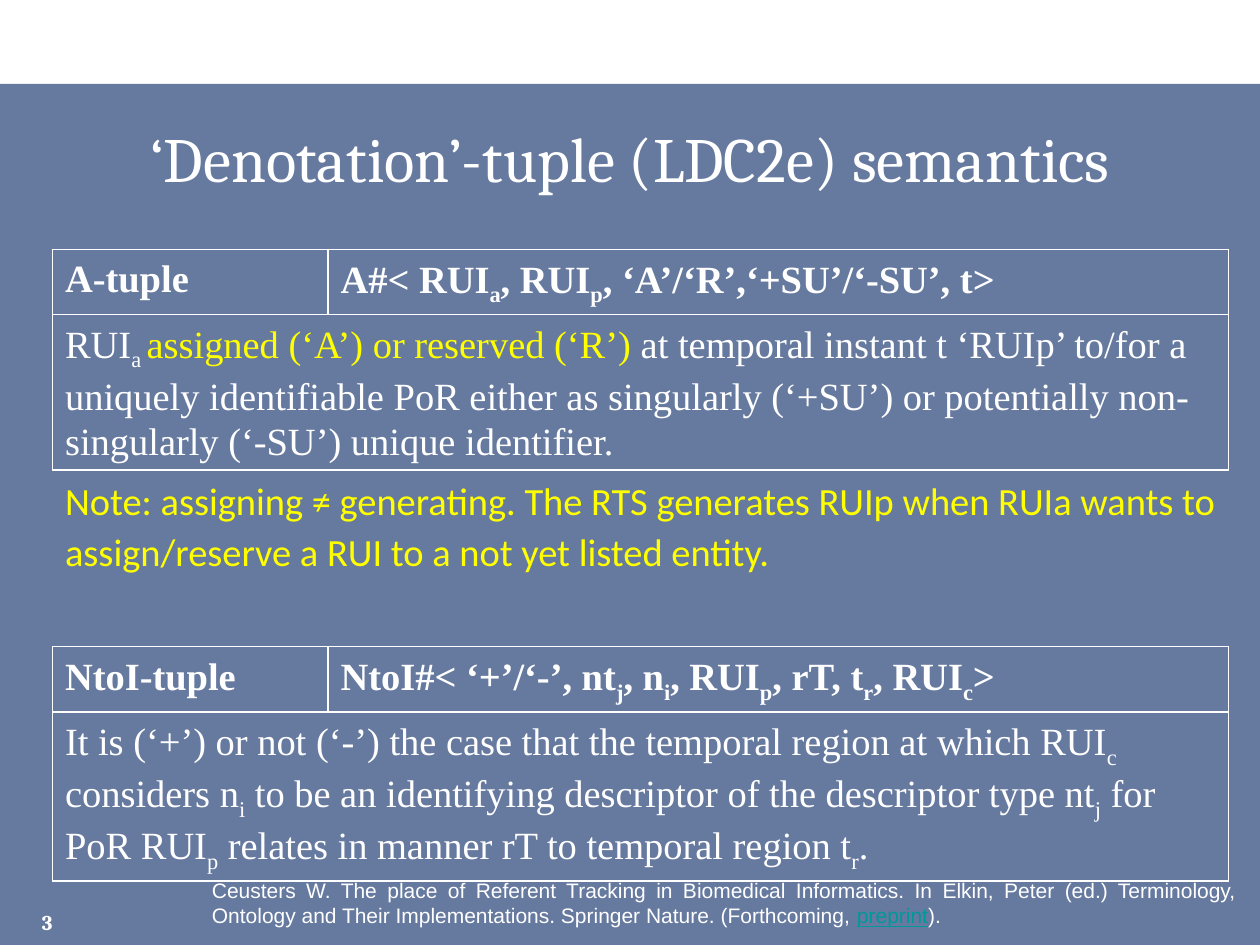
from lxml import etree
from pptx import Presentation
from pptx.dml.color import RGBColor
from pptx.enum.shapes import MSO_SHAPE
from pptx.enum.text import MSO_ANCHOR, PP_ALIGN
from pptx.oxml.ns import qn
from pptx.util import Inches, Pt

LEFT, CENTER, RIGHT, JUSTIFY = PP_ALIGN.LEFT, PP_ALIGN.CENTER, PP_ALIGN.RIGHT, PP_ALIGN.JUSTIFY
TOP, MIDDLE, BOTTOM = MSO_ANCHOR.TOP, MSO_ANCHOR.MIDDLE, MSO_ANCHOR.BOTTOM
RECTANGLE = MSO_SHAPE.RECTANGLE

WHITE, YELLOW, TEAL, NAVY = "FFFFFF", "FFFF00", "009999", "002060"
SERIF, HEADING, NOTE, SANS = "Times New Roman", "Cambria", "Calibri", "Arial"


def colour(value):
    return RGBColor.from_string(value)


def grid(units):
    """The slide is 120 columns by 90 rows, each a twelfth of an inch."""
    return Inches(units / 12)


class SlideBuilder:
    def __init__(self, deck):
        self.slide = deck.slides.add_slide(deck.slide_layouts[5])

    def add_spans(self, paragraph, spans, size, font, align=LEFT, bold=False):
        """Spans are (text, colour, underlined); '|' switches subscript on and off."""
        paragraph.alignment = align
        paragraph.font.size = Pt(size)
        paragraph.font.name = font
        paragraph.font.bold = bold
        for text, shade, underlined in spans:
            for index, part in enumerate(text.split("|")):
                if not part:
                    continue
                span = paragraph.add_run()
                span.text = part
                span.font.size = Pt(size)
                span.font.name = font
                span.font.bold = bold
                span.font.color.rgb = colour(shade)
                if underlined:
                    span.font.underline = True
                if index % 2:
                    span.font._element.set("baseline", "-25000")

    def panel(self, left, top, width, height, fill, opacity):
        shape = self.slide.shapes.add_shape(RECTANGLE, *map(grid, (left, top, width, height)))
        shape.shadow.inherit = False
        shape.fill.solid()
        shape.fill.fore_color.rgb = colour(fill)
        shape.line.fill.background()
        shade = shape._element.spPr.find(".//" + qn("a:srgbClr"))
        etree.SubElement(shade, qn("a:alpha")).set("val", str(opacity * 1000))
        # Send the panel behind the title
        self.slide.shapes._spTree.insert(2, shape._element)

    def title(self, text, left, top, width, height):
        box = self.slide.shapes.title
        box.left, box.top, box.width, box.height = map(grid, (left, top, width, height))
        box.text_frame.vertical_anchor = MIDDLE
        self.add_spans(box.text_frame.paragraphs[0], [(text, WHITE, False)], 36, HEADING, CENTER)

    def text(self, spans, left, top, width, height, font, align, anchor=TOP, inset=None, bold=False):
        box = self.slide.shapes.add_textbox(*map(grid, (left, top, width, height)))
        frame = box.text_frame
        frame.word_wrap = True
        frame.vertical_anchor = anchor
        if inset is not None:
            frame.margin_left = frame.margin_right = inset
            frame.margin_top = frame.margin_bottom = inset
        self.add_spans(frame.paragraphs[0], spans, 12, font, align, bold)

    def borders(self, cell, sides):
        properties = cell._tc.get_or_add_tcPr()
        for side in "LRTB":
            line = etree.SubElement(properties, qn(f"a:ln{side}"), w=str(Pt(1)))
            if side in sides:
                fill = etree.SubElement(line, qn("a:solidFill"))
                etree.SubElement(fill, qn("a:srgbClr"), val=WHITE)
            else:
                etree.SubElement(line, qn("a:noFill"))

    def table(self, rows, left, top, widths, heights):
        """A row is (cells, font, bold, bordered sides); a lone cell spans the row."""
        frame = self.slide.shapes.add_table(
            len(rows), len(widths), *map(grid, (left, top, sum(widths), sum(heights))))
        table = frame.table
        table.first_row = table.horz_banding = False
        for column, width in zip(table.columns, widths):
            column.width = grid(width)
        for number, (cells, font, bold, sides) in enumerate(rows):
            table.rows[number].height = grid(heights[number])
            for index in range(len(widths)):
                cell = table.cell(number, index)
                self.borders(cell, sides)
                cell.fill.background()
                cell.margin_bottom = 0
                if index < len(cells):
                    paragraph = cell.text_frame.paragraphs[0]
                    paragraph.line_spacing = 1.07
                    self.add_spans(paragraph, cells[index], 22, font, bold=bold)
            if len(cells) == 1:
                table.cell(number, 0).merge(table.cell(number, len(widths) - 1))


def heading_row(name, pattern):
    return [[(name, WHITE, False)], [(pattern, WHITE, False)]], SERIF, True, "LRTB"


def meaning_row(*spans):
    return [[(text, shade, False) for text, shade in spans]], SERIF, False, "LRTB"


def main():
    deck = Presentation()
    deck.slide_width, deck.slide_height = grid(120), grid(90)
    page = SlideBuilder(deck)

    # Background and title
    page.panel(0, 8, 120, 82, NAVY, 60)
    page.title("‘Denotation’-tuple (LDC2e) semantics", 3, 10, 114, 10)

    # Tuple definitions
    note = ("Note: assigning ≠ generating. The RTS generates RUIp when RUIa wants "
            "to assign/reserve a RUI to a not yet listed entity.")
    rows = [
        heading_row("A-tuple", "A#< RUI|a|, RUI|p|, ‘A’/‘R’,‘+SU’/‘-SU’, t>"),
        meaning_row(
            ("RUI|a |", WHITE),
            ("assigned (‘A’) or reserved (‘R’)", YELLOW),
            (" at temporal instant t ‘RUIp’ to/for a uniquely identifiable PoR either as "
             "singularly (‘+SU’) or potentially non-singularly (‘-SU’) unique identifier.", WHITE)),
        ([[(note, YELLOW, False)]], NOTE, False, "TB"),
        heading_row("NtoI-tuple", "NtoI#< ‘+’/‘-’, nt|j|, n|i|, RUI|p|, rT, t|r|, RUI|c|>"),
        meaning_row(
            ("It is (‘+’) or not (‘-’) the case that the temporal region at which RUI|c| "
             "considers n|i| to be an identifying descriptor of the descriptor type nt|j| "
             "for PoR RUI|p| relates in manner rT to temporal region t|r|.", WHITE)),
    ]
    page.table(rows, 5, 23.75, [26.25, 85.75], [6.2, 14.8, 16.85, 6.2, 16.1])

    # Page number and citation
    page.text([("3", WHITE, False)], 0, 87, 5, 2, HEADING, RIGHT, BOTTOM, inset=0, bold=True)
    citation = ("Ceusters W. The place of Referent Tracking in Biomedical Informatics. In Elkin, "
                "Peter (ed.) Terminology, Ontology and Their Implementations. Springer Nature. "
                "(Forthcoming, ")
    page.text([(citation, WHITE, False), ("preprint", TEAL, True), (").", WHITE, False)],
              19, 83, 100, 6, SANS, JUSTIFY)

    deck.save("out.pptx")


if __name__ == "__main__":
    main()
